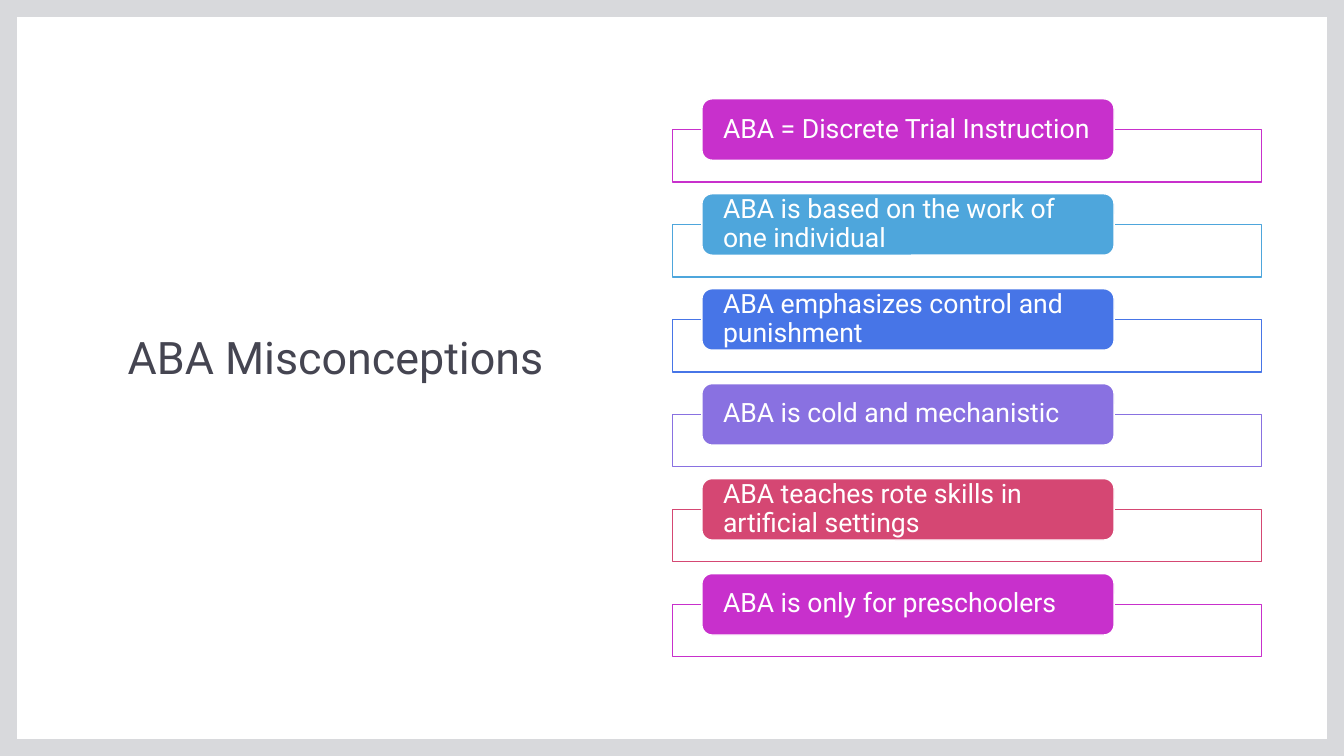
from lxml.etree import SubElement
from pptx import Presentation
from pptx.dml.color import RGBColor
from pptx.enum.shapes import MSO_SHAPE
from pptx.enum.text import MSO_ANCHOR, PP_ALIGN
from pptx.oxml.ns import qn
from pptx.util import Inches, Pt

WHITE = RGBColor(0xFF, 0xFF, 0xFF)
FRAME_GREY = RGBColor(0xD8, 0xD9, 0xDC)
TITLE_GREY = RGBColor(0x45, 0x45, 0x51)
MAGENTA = RGBColor(0xC8, 0x30, 0xCC)
SKY = RGBColor(0x4E, 0xA6, 0xDC)
BLUE = RGBColor(0x47, 0x75, 0xE7)
VIOLET = RGBColor(0x89, 0x71, 0xE1)
ROSE = RGBColor(0xD5, 0x47, 0x73)

FONT = "Roboto"
TITLE = "ABA Misconceptions"
MISCONCEPTIONS = [
    ("ABA = Discrete Trial Instruction", MAGENTA),
    ("ABA is based on the work of one individual", SKY),
    ("ABA emphasizes control and punishment", BLUE),
    ("ABA is cold and mechanistic", VIOLET),
    ("ABA teaches rote skills in artificial settings", ROSE),
    ("ABA is only for preschoolers", MAGENTA),
]

WIDTH, HEIGHT = 13.33, 7.5
MARGIN = 0.17
FIRST_TOP, LAST_TOP = 0.98, 5.69
ROW_STEP = (LAST_TOP - FIRST_TOP) / (len(MISCONCEPTIONS) - 1)
PANEL_LEFT, PANEL_WIDTH, PANEL_HEIGHT = 6.67, 5.84, 0.52
LABEL_WIDTH, LABEL_HEIGHT = 0.7 * PANEL_WIDTH, 0.61
LABEL_LEFT = PANEL_LEFT + 0.05 * PANEL_WIDTH


def add_block(page, kind, left, top, width, height, fill, line=None):
    block = page.shapes.add_shape(
        kind, Inches(left), Inches(top), Inches(width), Inches(height))
    block.shadow.inherit = False
    block.fill.solid()
    block.fill.fore_color.rgb = fill
    if line is None:
        block.line.fill.background()
    else:
        block.line.color.rgb = line
        block.line.width = Pt(1)
    return block


def write(box, text, size, color, align, spacing, insets):
    frame = box.text_frame
    frame.word_wrap = True
    frame.vertical_anchor = MSO_ANCHOR.MIDDLE
    (frame.margin_left, frame.margin_top,
     frame.margin_right, frame.margin_bottom) = map(Inches, insets)
    para = frame.paragraphs[0]
    para.alignment = align
    para.line_spacing = spacing
    span = para.add_run()
    span.text = text
    span.font.name = FONT
    span.font.size = Pt(size)
    span.font.color.rgb = color


def set_opacity(block, percent):
    color = block.fill._xPr.find(qn("a:solidFill"))[0]
    SubElement(color, qn("a:alpha")).set("val", str(percent * 1000))


def add_misconception(page, row, text, color):
    top = FIRST_TOP + row * ROW_STEP
    panel = add_block(page, MSO_SHAPE.RECTANGLE, PANEL_LEFT,
                      top + LABEL_HEIGHT / 2, PANEL_WIDTH, PANEL_HEIGHT,
                      WHITE, color)
    set_opacity(panel, 90)
    label = add_block(page, MSO_SHAPE.ROUNDED_RECTANGLE, LABEL_LEFT, top,
                      LABEL_WIDTH, LABEL_HEIGHT, color, WHITE)
    write(label, text, 19, WHITE, PP_ALIGN.LEFT, 0.9, (0.18, 0, 0.18, 0))


def main():
    deck = Presentation()
    deck.slide_width, deck.slide_height = Inches(WIDTH), Inches(HEIGHT)
    page = deck.slides.add_slide(deck.slide_layouts[6])
    add_block(page, MSO_SHAPE.RECTANGLE, 0, 0, WIDTH, HEIGHT, FRAME_GREY)
    add_block(page, MSO_SHAPE.RECTANGLE, MARGIN, MARGIN,
              WIDTH - 2 * MARGIN, HEIGHT - 2 * MARGIN, WHITE)

    title = page.shapes.add_textbox(
        Inches(1.12), Inches(1.12), Inches(4.42), Inches(5.25))
    write(title, TITLE, 32, TITLE_GREY, PP_ALIGN.CENTER, 1.1,
          (0.1, 0.05, 0.1, 0.51))

    for row, (text, color) in enumerate(MISCONCEPTIONS):
        add_misconception(page, row, text, color)
    deck.save("out.pptx")


if __name__ == "__main__":
    main()
